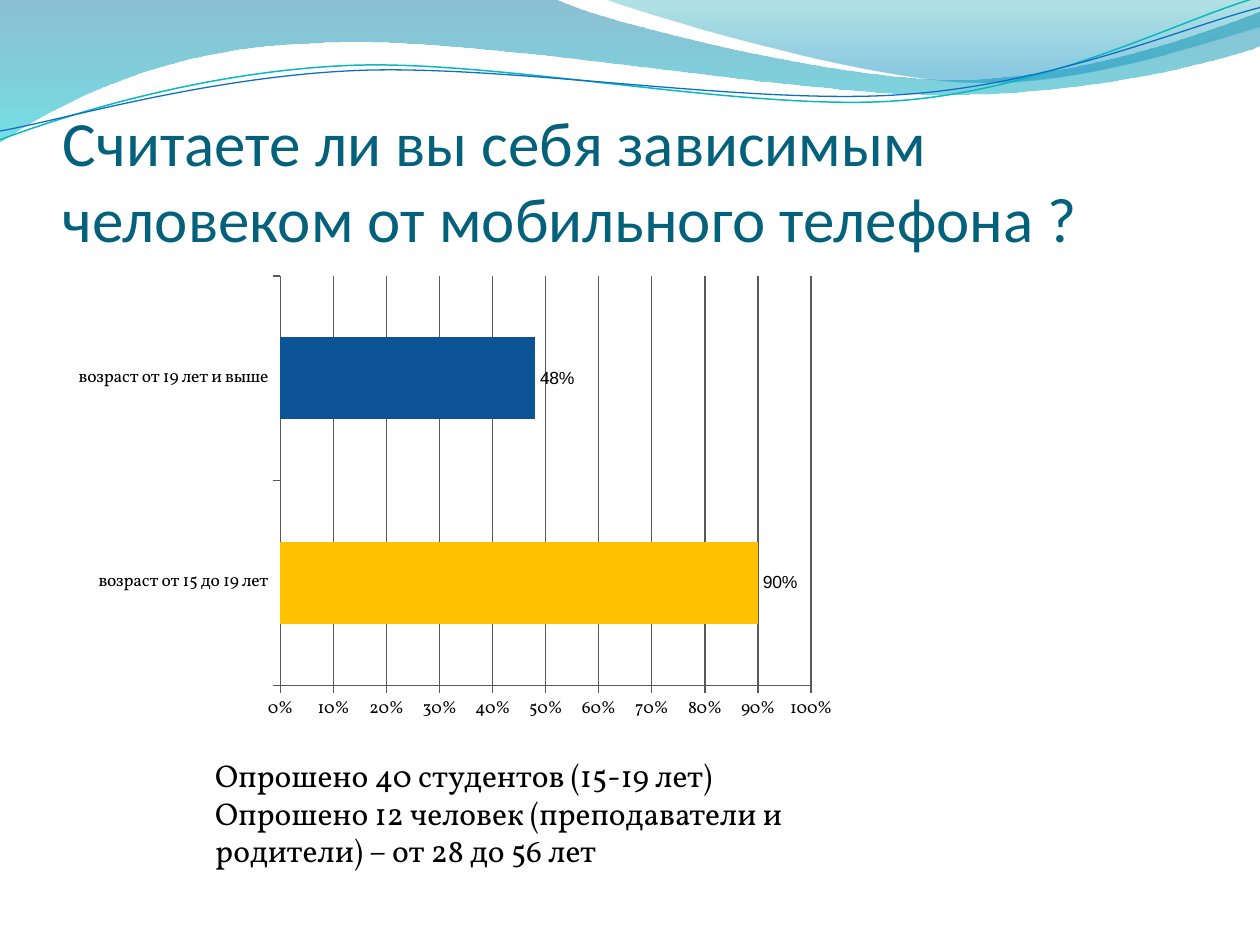
import dataclasses

import lxml.etree
import pptx
import pptx.chart.data
import pptx.dml.color
import pptx.enum.chart
import pptx.enum.text
import pptx.oxml.ns
import pptx.util

Cm = pptx.util.Cm
Pt = pptx.util.Pt
qn = pptx.oxml.ns.qn


@dataclasses.dataclass(frozen=True)
class Theme:
    title_font: str = "Calibri"
    body_font: str = "Vollkorn"
    label_font: str = "Arial"
    title_size: int = 36
    body_size: int = 18
    chart_size: int = 10
    title_color: str = "04617B"
    text_color: str = "000000"
    grid_color: str = "595959"
    younger_color: str = "FFC000"
    older_color: str = "0B5394"
    teal_line: str = "0AB8BF"
    blue_line: str = "0F6FC6"
    broad_wave: tuple = ((0, "0074A1", 45), (1, "00C6CF", 55))
    right_wave: tuple = ((0, "00A1A9", 30), (0.8, "008BBF", 45))


def rgb(color):
    return pptx.dml.color.RGBColor.from_string(color)


class SlideBuilder:
    def __init__(self, slide, theme):
        self.slide = slide
        self.theme = theme

    def freeform(self, start, segments, closed):
        points = [
            (Cm(2.54 * segment[i]), Cm(2.54 * segment[i + 1]))
            for segment in (start, *segments)
            for i in range(0, len(segment), 2)
        ]
        builder = self.slide.shapes.build_freeform(*points[0], scale=1.0)
        builder.add_line_segments(points[1:], close=closed)
        shape = builder.convert_to_shape()
        shape.shadow.inherit = False
        corners = iter(list(shape._element.spPr.iter(qn("a:lnTo"))))
        for segment in segments:
            bend = [next(corners) for _ in range(len(segment) // 2)]
            if len(bend) == 3:
                cubic = lxml.etree.Element(qn("a:cubicBezTo"))
                bend[0].addprevious(cubic)
                for corner in bend:
                    cubic.append(corner[0])
                    corner.getparent().remove(corner)
        return shape

    def wave(self, stops, start, *segments):
        shape = self.freeform(start, segments, True)
        shape.line.fill.background()
        shape.fill.gradient()
        shape.fill.gradient_angle = 270
        for stop, (position, color, _) in zip(shape.fill.gradient_stops, stops):
            stop.position = position
            stop.color.rgb = rgb(color)
        colors = list(shape._element.spPr.iter(qn("a:srgbClr")))
        for node, (_, _, opacity) in zip(colors, stops):
            alpha = lxml.etree.SubElement(node, qn("a:alpha"))
            alpha.set("val", str(opacity * 1000))

    def curve(self, color, width, start, *segments):
        shape = self.freeform(start, segments, False)
        shape.fill.background()
        shape.line.color.rgb = rgb(color)
        shape.line.width = Pt(width)

    def text(self, box, paragraphs, font, size, color):
        frame = self.slide.shapes.add_textbox(*map(Cm, box)).text_frame
        frame.word_wrap = True
        for index, words in enumerate(paragraphs):
            paragraph = frame.paragraphs[0] if index == 0 else frame.add_paragraph()
            run = paragraph.add_run()
            run.text = words
            run.font.name = font
            run.font.size = Pt(size)
            run.font.color.rgb = rgb(color)
        return frame

    def bar_chart(self, box, answers):
        theme = self.theme
        survey = pptx.chart.data.CategoryChartData(number_format="0%")
        survey.categories = [group for group, _, _ in answers]
        survey.add_series("Series 1", [share for _, share, _ in answers])
        chart = self.slide.shapes.add_chart(
            pptx.enum.chart.XL_CHART_TYPE.BAR_CLUSTERED, *map(Cm, box), survey
        ).chart
        chart.has_legend = False
        chart.has_title = False
        chart.font.name = theme.body_font
        chart.font.size = Pt(theme.chart_size)
        chart.font.color.rgb = rgb(theme.text_color)

        shares = chart.value_axis
        shares.minimum_scale, shares.maximum_scale, shares.major_unit = 0, 1, 0.1
        shares.has_major_gridlines = True
        shares.tick_labels.number_format = "0%"
        shares.tick_labels.number_format_is_linked = False
        for axis in (shares, chart.category_axis):
            axis.major_tick_mark = pptx.enum.chart.XL_TICK_MARK.OUTSIDE
            axis.format.line.color.rgb = rgb(theme.grid_color)
        shares.major_gridlines.format.line.color.rgb = rgb(theme.grid_color)

        plot = chart.plots[0]
        plot.gap_width = 150
        plot.vary_by_categories = False
        series = plot.series[0]
        series.invert_if_negative = False
        for index, (_, _, color) in enumerate(answers):
            fill = series.points[index].format.fill
            fill.solid()
            fill.fore_color.rgb = rgb(color)
        labels = series.data_labels
        labels.show_value = True
        labels.number_format = "0%"
        labels.number_format_is_linked = False
        labels.position = pptx.enum.chart.XL_LABEL_POSITION.OUTSIDE_END
        labels.font.name = theme.label_font
        labels.font.size = Pt(theme.chart_size)
        labels.font.color.rgb = rgb(theme.text_color)


def main():
    deck = pptx.Presentation()
    deck.slide_width, deck.slide_height = Cm(25.4), Cm(19.05)
    theme = Theme()
    page = SlideBuilder(deck.slides.add_slide(deck.slide_layouts[6]), theme)

    page.wave(
        theme.broad_wave,
        (0, 0), (4.4, -0.01),
        (4.76, 0.17, 6.64, 0.63, 7.58, 0.63), (8.53, 0.63, 9.58, 0.26, 10, 0.09),
        (10.01, 0.36),
        (9.83, 0.44, 8.7, 0.76, 7.46, 0.75), (6.22, 0.75, 3.82, 0.28, 2.57, 0.34),
        (1.29, 0.36, 0.46, 0.83, -0.01, 1.13),
    )
    page.wave(
        theme.right_wave,
        (4.79, -0.01),
        (5.09, 0.11, 6.82, 0.62, 7.69, 0.65), (8.56, 0.69, 9.61, 0.32, 10, 0.21),
        (10, 0),
    )
    page.curve(
        theme.teal_line, 0.85,
        (0, 1.11),
        (0.48, 0.93, 1.58, 0.57, 2.77, 0.52), (3.95, 0.47, 5.93, 0.89, 7.13, 0.8),
        (8.33, 0.71, 9.38, 0.15, 9.98, -0.02),
    )
    page.curve(
        theme.blue_line, 0.75,
        (0, 1.04),
        (0.47, 0.96, 1.64, 0.61, 2.83, 0.56), (4.03, 0.51, 5.97, 0.84, 7.17, 0.75),
        (8.36, 0.67, 9.41, 0.21, 10, 0.06),
    )

    question = page.text(
        (1.27, 1.96, 22.86, 3.18),
        ["Считаете ли вы себя зависимым человеком от мобильного телефона ?"],
        theme.title_font, theme.title_size, theme.title_color,
    )
    question.vertical_anchor = pptx.enum.text.MSO_ANCHOR.BOTTOM
    question.margin_left = question.margin_right = question.margin_bottom = 0

    page.bar_chart((1.27, 5.38, 15.82, 9.35), [
        ("возраст от 15 до 19 лет", 0.9, theme.younger_color),
        ("возраст от 19 лет и выше", 0.48, theme.older_color),
    ])

    respondents = page.text(
        (4.09, 15.11, 14.81, 2.57),
        [
            "Опрошено 40 студентов (15-19 лет)",
            "Опрошено 12 человек (преподаватели и родители) – от 28 до 56 лет",
        ],
        theme.body_font, theme.body_size, theme.text_color,
    )
    respondents.auto_size = pptx.enum.text.MSO_AUTO_SIZE.SHAPE_TO_FIT_TEXT

    deck.save("out.pptx")


if __name__ == "__main__":
    main()
